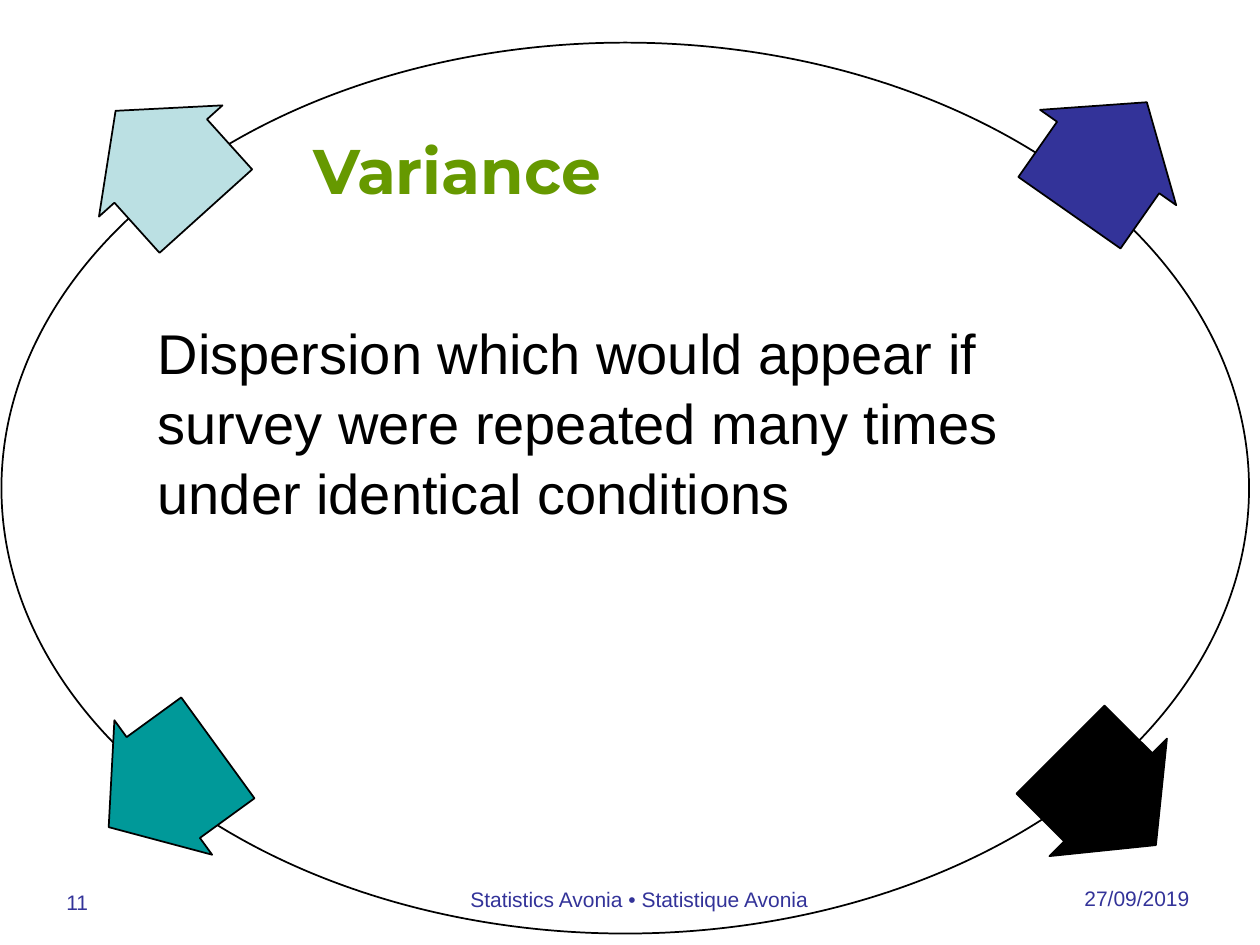
from pptx import Presentation
from pptx.dml.color import RGBColor
from pptx.enum import shapes, text
from pptx.util import Cm, Pt

# Content
TITLE = "Variance"
BODY = ("Dispersion which would appear if survey were repeated "
        "many times under identical conditions")
# Arrows: left, top (cm), rotation, colour name
ARROWS = [
    (1.93, 14.2, 144, "teal"),
    (20.98, 1.5, 305, "indigo"),
    (20.98, 14.4, 45, "black"),
    (1.88, 1.57, 228, "pale"),
]
# Footer: text, left, top, width (cm), alignment
FOOTER = [
    ("27/09/2019", 20.7, 17.73, 3.53, text.PP_ALIGN.RIGHT),
    ("11", 1.09, 17.81, 4.22, text.PP_ALIGN.LEFT),
    ("Statistics Avonia • Statistique Avonia", 7.49, 17.75, 10.8,
     text.PP_ALIGN.CENTER),
]
THEME = {
    "green": RGBColor(0x66, 0x99, 0x00),
    "teal": RGBColor(0x00, 0x99, 0x99),
    "indigo": RGBColor(0x33, 0x33, 0x99),
    "black": RGBColor(0x00, 0x00, 0x00),
    "pale": RGBColor(0xBB, 0xE0, 0xE3),
    "heading_font": "Montserrat", "body_font": "Arial",
    "title_size": Pt(36), "body_size": Pt(32), "footer_size": Pt(12),
}


def place(box, left, top, width, height):
    box.left, box.top, box.width, box.height = map(
        Cm, (left, top, width, height))


def write(box, words, font, size, colour, align=text.PP_ALIGN.LEFT, bold=False):
    frame = box.text_frame
    frame.word_wrap = True
    para = frame.paragraphs[0]
    para.alignment = align
    span = para.add_run()
    span.text = words
    span.font.name = THEME[font]
    span.font.size = THEME[size]
    span.font.bold = bold
    span.font.color.rgb = THEME[colour]
    return frame


def add_outlined(page, kind, area, fill=None):
    shape = page.shapes.add_shape(kind, *map(Cm, area))
    shape.shadow.inherit = False
    shape.line.color.rgb = THEME["black"]
    shape.line.width = Pt(1)
    if fill:
        shape.fill.solid()
        shape.fill.fore_color.rgb = THEME[fill]
    else:
        shape.fill.background()
    return shape


def main():
    deck = Presentation()
    deck.slide_width, deck.slide_height = Cm(25.4), Cm(19.05)
    page = deck.slides.add_slide(deck.slide_layouts[5])

    # Ring behind everything
    add_outlined(page, shapes.MSO_SHAPE.OVAL, (0.03, 0.86, 25.15, 17.96))

    # Title
    title = page.shapes.title
    place(title, 0.99, 2.59, 23.32, 1.63)
    frame = write(title, TITLE, "heading_font", "title_size", "green", bold=True)
    frame.auto_size = text.MSO_AUTO_SIZE.NONE
    frame.vertical_anchor = text.MSO_ANCHOR.MIDDLE
    frame.margin_left = Cm(5.33)

    # Definition
    body = page.shapes.add_textbox(Cm(1.96), Cm(4.24), Cm(21), Cm(11.43))
    frame = write(body, BODY, "body_font", "body_size", "black")
    frame.margin_left, frame.margin_top = Cm(1.22), Cm(2.13)
    frame.paragraphs[0].line_spacing = 1.04

    # Arrows around the ring
    for left, top, rotation, colour in ARROWS:
        arrow = add_outlined(page, shapes.MSO_SHAPE.RIGHT_ARROW,
                             (left, top, 2.72, 3.35), colour)
        arrow.adjustments[0], arrow.adjustments[1] = 0.75, 0.5
        arrow.rotation = rotation

    # Footer
    for words, left, top, width, align in FOOTER:
        box = page.shapes.add_textbox(Cm(left), Cm(top), Cm(width), Cm(1.32))
        write(box, words, "body_font", "footer_size", "indigo", align)

    deck.save("out.pptx")


if __name__ == "__main__":
    main()
